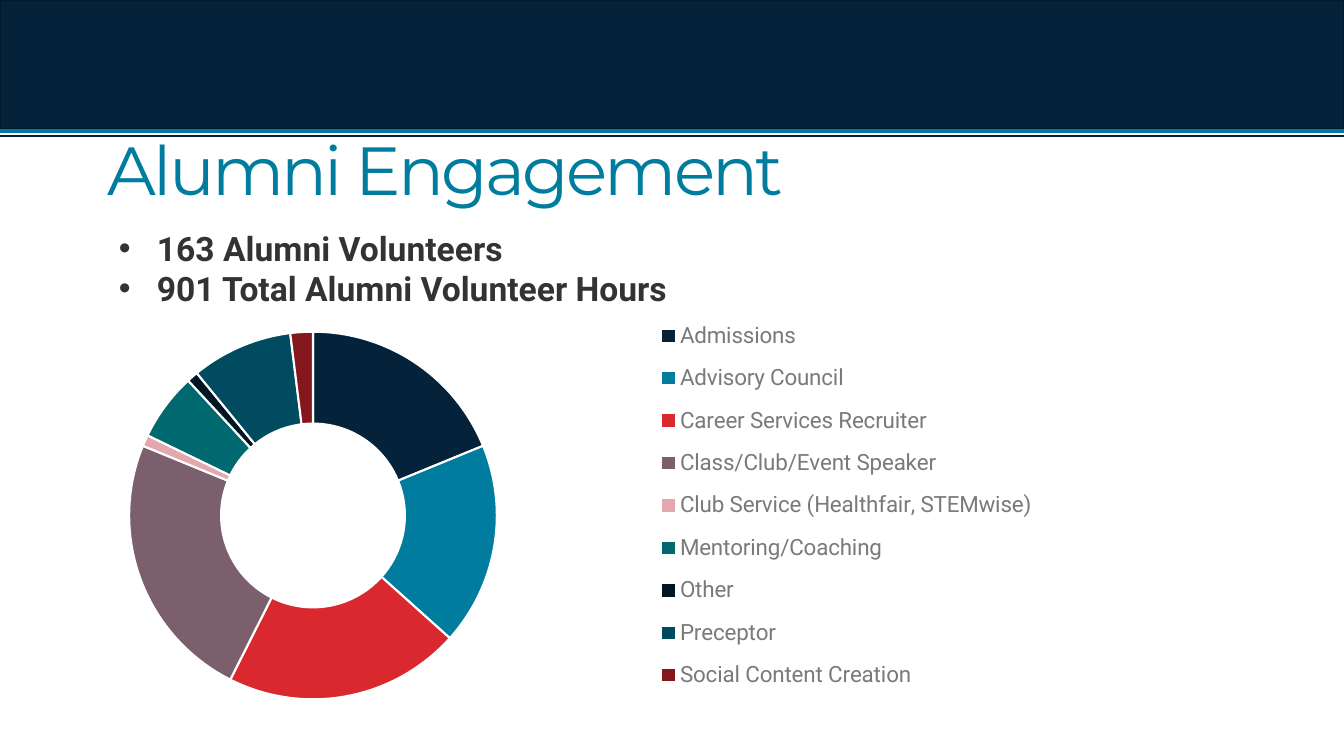
from lxml import etree
from pptx import Presentation
from pptx.chart.data import CategoryChartData
from pptx.dml.color import RGBColor
from pptx.enum.chart import XL_CHART_TYPE, XL_LEGEND_POSITION
from pptx.enum.shapes import MSO_CONNECTOR, MSO_SHAPE
from pptx.enum.text import MSO_ANCHOR
from pptx.oxml import parse_xml
from pptx.oxml.ns import nsdecls, qn
from pptx.util import Emu, Pt

TITLE = "Alumni Engagement"
FACTS = ["163 Alumni Volunteers", "901 Total Alumni Volunteer Hours"]
ACTIVITIES = [
    ("Admissions", 19, "04233B"),
    ("Advisory Council", 18, "007D9E"),
    ("Career Services Recruiter", 21, "D9282E"),
    ("Class/Club/Event Speaker", 24, "7B5F6C"),
    ("Club Service (Healthfair, STEMwise)", 1, "E2A8AD"),
    ("Mentoring/Coaching", 6, "00696F"),
    ("Other", 1, "021523"),
    ("Preceptor", 9, "004B5F"),
    ("Social Content Creation", 2, "83171B"),
]
RULES = [(131, "007D9E", 3), (136, "04233B", 1)]
PLOT = {"x": 0.06, "y": 0.06, "w": 0.31, "h": 0.92}
LEGEND = {"x": 0.5, "y": 0, "w": 0.33, "h": 0.99}
WIDTH, HEIGHT = 1344, 756


def px(n):
    return Emu(round(n * 914400 / 100.8))


def box(*lengths):
    return [px(n) for n in lengths]


def rgb(color):
    return RGBColor.from_string(color)


def style(font, name, size, color):
    font.name, font.size = name, Pt(size)
    font.color.rgb = rgb(color)


def add_text(p, text, name, size, color):
    r = p.add_run()
    r.text = text
    style(r.font, name, size, color)
    return r


def manual_layout(fractions, inner=False):
    target = '<c:layoutTarget val="inner"/>' if inner else ""
    modes = "".join(f'<c:{k}Mode val="edge"/>' for k in "xy")
    values = "".join(f'<c:{k} val="{v}"/>' for k, v in fractions.items())
    return parse_xml(f'<c:layout {nsdecls("c")}><c:manualLayout>'
                     f'{target}{modes}{values}</c:manualLayout></c:layout>')


prs = Presentation()
prs.slide_width, prs.slide_height = px(WIDTH), px(HEIGHT)
s = prs.slides.add_slide(prs.slide_layouts[6])

band = s.shapes.add_shape(MSO_SHAPE.RECTANGLE, *box(0, 0, WIDTH, 129))
band.shadow.inherit = False
band.fill.solid()
band.fill.fore_color.rgb = rgb("04233B")
band.line.color.rgb = rgb("031A2C")
band.line.width = Pt(1)

for y, color, width in RULES:
    rule = s.shapes.add_connector(MSO_CONNECTOR.STRAIGHT, *box(0, y, WIDTH, y))
    rule.line.color.rgb = rgb(color)
    rule.line.width = Pt(width)
    etree.SubElement(rule._element.spPr, qn("a:effectLst"))

tf = s.shapes.add_textbox(*box(98, 134, 1148, 84)).text_frame
tf.word_wrap = True
tf.vertical_anchor = MSO_ANCHOR.TOP
tf.margin_top = px(3)
p = tf.paragraphs[0]
p.line_spacing = 0.9
r = add_text(p, TITLE, "Montserrat", 48.6, "007D9E")
r._r.get_or_add_rPr().set("spc", "-200")

data = CategoryChartData()
data.categories = [name for name, _, _ in ACTIVITIES]
data.add_series("Series 1", [value for _, value, _ in ACTIVITIES])
chart = s.shapes.add_chart(XL_CHART_TYPE.DOUGHNUT, *box(58, 306, 1186, 403), data).chart
chart.has_title = False
style(chart.font, "Roboto", 10, "333333")
plot = chart.plots[0]
plot.vary_by_categories = True
plot._element.find(qn("c:holeSize")).set("val", "75")
for i, (_, _, color) in enumerate(ACTIVITIES):
    fmt = plot.series[0].points[i].format
    fmt.fill.solid()
    fmt.fill.fore_color.rgb = rgb(color)
    fmt.line.color.rgb = rgb("FFFFFF")
    fmt.line.width = Pt(1.5)

chart.has_legend = True
legend = chart.legend
legend.position = XL_LEGEND_POSITION.RIGHT
legend.include_in_layout = False
style(legend.font, "Roboto", 16, "7A7A7A")
plot_area = chart._chartSpace.chart.plotArea
for parent, layout in [(plot_area, manual_layout(PLOT, True)),
                       (legend._element, manual_layout(LEGEND))]:
    for old in parent.findall(qn("c:layout")):
        parent.remove(old)
    if parent is plot_area:
        parent.insert(0, layout)
    else:
        parent.find(qn("c:legendPos")).addnext(layout)

tf = s.shapes.add_textbox(*box(58, 223, 673, 92)).text_frame
tf.word_wrap = True
for i, fact in enumerate(FACTS):
    p = tf.paragraphs[0] if i == 0 else tf.add_paragraph()
    p.level = 1
    pPr = p._p.get_or_add_pPr()
    pPr.set("marL", str(px(89)))
    pPr.set("indent", str(-px(38)))
    etree.SubElement(pPr, qn("a:buFont")).set("typeface", "Arial")
    etree.SubElement(pPr, qn("a:buChar")).set("char", "•")
    add_text(p, fact, "Roboto", 24, "333333").font.bold = True

prs.save("out.pptx")
